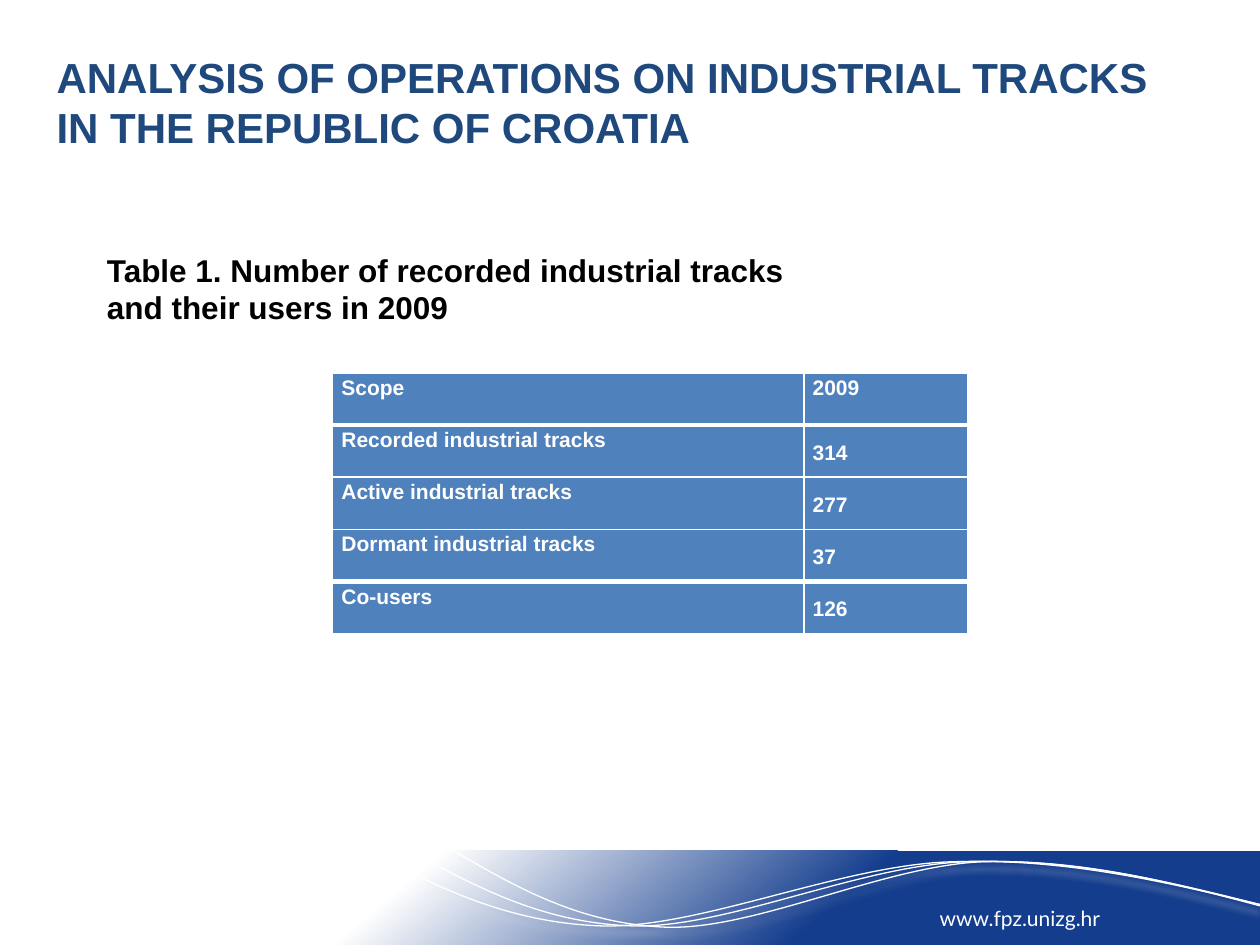
import lxml.etree
import pptx
import pptx.dml.color
import pptx.enum.shapes
import pptx.enum.text
import pptx.oxml
import pptx.oxml.ns
import pptx.util
from pptx.util import Inches

ALIGN = pptx.enum.text.PP_ALIGN
ANCHOR = pptx.enum.text.MSO_ANCHOR
NAVY, WHITE, BLUE = "143D8D", "FFFFFF", "4F81BD"
WAVES = [
    [(2.88, 6.73), (3.45, 7.03), (4.02, 7.33), (4.8, 7.35), (5.58, 7.36),
     (6.7, 6.86), (7.56, 6.84), (8.43, 6.81), (9.21, 6.99), (10, 7.18)],
    [(3.21, 6.73), (3.76, 7.03), (4.3, 7.33), (5.04, 7.35), (5.79, 7.36),
     (6.85, 6.86), (7.68, 6.84), (8.5, 6.81), (9.25, 6.99), (10, 7.18)],
    [(3.58, 6.74), (4.09, 7.04), (4.61, 7.34), (5.31, 7.36), (6.02, 7.37),
     (7.02, 6.87), (7.8, 6.84), (8.58, 6.82), (9.29, 7), (10, 7.19)],
]
TRACK_ROWS = [
    ("Scope", "2009"),
    ("Recorded industrial tracks", "314"),
    ("Active industrial tracks", "277"),
    ("Dormant industrial tracks", "37"),
    ("Co-users", "126"),
]


def colour(value):
    return pptx.dml.color.RGBColor.from_string(value)


def add_span(para, text, size, value, font="Arial", bold=True):
    span = para.add_run()
    span.text = text
    span.font.name = font
    span.font.size = pptx.util.Pt(size)
    span.font.bold = bold
    span.font.color.rgb = colour(value)


def add_text(page, area, text, size, value, **style):
    box = page.shapes.add_textbox(*map(Inches, area))
    box.text_frame.word_wrap = True
    add_span(box.text_frame.paragraphs[0], text, size, value, **style)


def bend_segments(shape):
    segments = list(shape.element.spPr.iter(pptx.oxml.ns.qn("a:lnTo")))
    for start in range(0, len(segments), 3):
        group = segments[start:start + 3]
        curve = lxml.etree.Element(pptx.oxml.ns.qn("a:cubicBezTo"))
        group[0].addprevious(curve)
        for segment in group:
            curve.append(segment[0])
            segment.getparent().remove(segment)


def add_glow(shape):
    effects = shape.element.spPr.find(pptx.oxml.ns.qn("a:effectLst"))
    effects.append(pptx.oxml.parse_xml(
        f'<a:outerShdw {pptx.oxml.ns.nsdecls("a")} blurRad="50800" dist="50800" dir="5400000">'
        f'<a:srgbClr val="{WHITE}"><a:alpha val="27000"/></a:srgbClr></a:outerShdw>'))


def add_wave(page, knots):
    points = [(Inches(x), Inches(y)) for x, y in knots]
    builder = page.shapes.build_freeform(*points[0])
    builder.add_line_segments(points[1:], close=False)
    wave = builder.convert_to_shape()
    bend_segments(wave)
    wave.fill.background()
    wave.line.color.rgb = colour(WHITE)
    wave.line.width = pptx.util.Pt(0.75)
    wave.shadow.inherit = False
    add_glow(wave)


def add_footer(page, area):
    band = page.shapes.add_shape(pptx.enum.shapes.MSO_SHAPE.RECTANGLE, *map(Inches, area))
    band.shadow.inherit = False
    band.line.fill.background()
    band.fill.gradient()
    band.fill.gradient_angle = 130
    for stop, (position, value) in zip(band.fill.gradient_stops, [(0.38, NAVY), (0.75, WHITE)]):
        stop.position = position
        stop.color.rgb = colour(value)
    for knots in WAVES:
        add_wave(page, knots)
    left, top, width, height = area
    add_text(page, (left + width - 2.64, top + 0.39, 1.97, 0.3),
             "www.fpz.unizg.hr", 12, WHITE, font="Lato", bold=False)


def add_borders(cell, top, bottom):
    properties = cell._tc.get_or_add_tcPr()
    for side, points in (("L", 1), ("R", 1), ("T", top), ("B", bottom)):
        line = lxml.etree.SubElement(properties, pptx.oxml.ns.qn(f"a:ln{side}"),
                                     w=str(pptx.util.Pt(points)))
        fill = lxml.etree.SubElement(line, pptx.oxml.ns.qn("a:solidFill"))
        lxml.etree.SubElement(fill, pptx.oxml.ns.qn("a:srgbClr"), val=WHITE)


def add_track_table(page, area):
    count = len(TRACK_ROWS)
    table = page.shapes.add_table(count, 2, *map(Inches, area)).table
    for column, width in zip(table.columns, (3.74, 1.3)):
        column.width = Inches(width)
    thick = (1, count - 1)
    for row, texts in enumerate(TRACK_ROWS):
        for column, text in enumerate(texts):
            cell = table.cell(row, column)
            add_borders(cell, 3 if row in thick else 1, 3 if row + 1 in thick else 1)
            cell.fill.solid()
            cell.fill.fore_color.rgb = colour(BLUE)
            cell.margin_left = cell.margin_right = Inches(0.07)
            cell.margin_top = cell.margin_bottom = 0
            cell.vertical_anchor = ANCHOR.MIDDLE if row and column else ANCHOR.TOP
            para = cell.text_frame.paragraphs[0]
            para.alignment = ALIGN.LEFT if (row, column) == (1, 0) else ALIGN.JUSTIFY
            para.line_spacing = 1.15
            add_span(para, text, 12, WHITE)


def main():
    deck = pptx.Presentation()
    deck.slide_width, deck.slide_height = Inches(10), Inches(7.5)
    page = deck.slides.add_slide(deck.slide_layouts[6])
    add_footer(page, (1.06, 6.75, 8.94, 0.75))
    add_text(page, (0.35, 0.36, 9.15, 6.34),
             "ANALYSIS OF OPERATIONS ON INDUSTRIAL TRACKS IN THE REPUBLIC OF CROATIA", 24, "1F497D")
    add_text(page, (0.75, 1.94, 5.59, 0.71),
             "Table 1. Number of recorded industrial tracks and their users in 2009", 18, "000000")
    add_track_table(page, (2.64, 2.96, 5.04, 2.07))
    deck.save("out.pptx")


if __name__ == "__main__":
    main()
